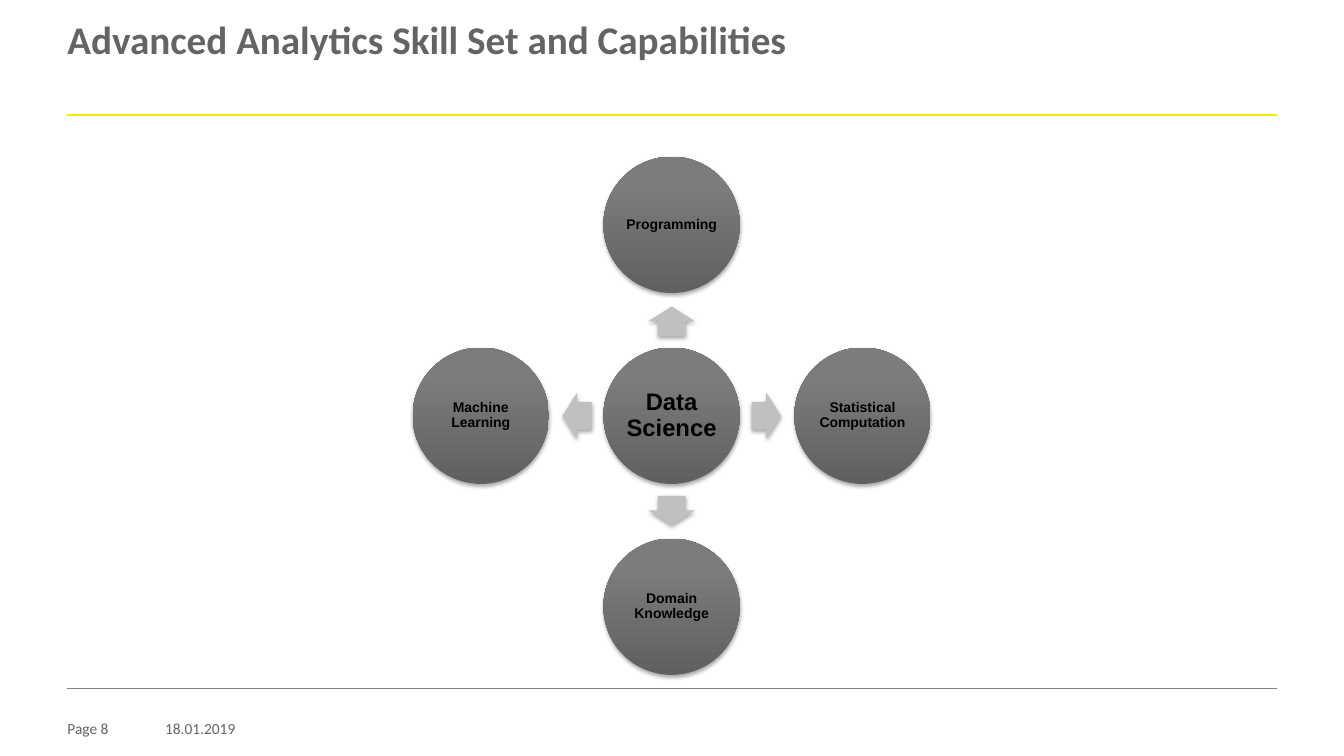
"""Build a slide with data science at the centre of four skills."""
import copy

import pptx
import pptx.dml.color
import pptx.enum.shapes
import pptx.enum.text
import pptx.oxml
import pptx.util

Pt = pptx.util.Pt
SHAPES = pptx.enum.shapes.MSO_SHAPE
ALIGN = pptx.enum.text.PP_ALIGN
ANCHOR = pptx.enum.text.MSO_ANCHOR
NS = "http://schemas.openxmlformats.org/drawingml/2006/main"

TITLE = "Advanced Analytics Skill Set and Capabilities"
PAGE = "Page 8"
DATE = "18.01.2019"
HUB = "Data Science"
SKILLS = [
    ("Programming", 0, -1, 270),
    ("Statistical Computation", 1, 0, 0),
    ("Domain Knowledge", 0, 1, 90),
    ("Machine Learning", -1, 0, 180),
]
RULES = [(82, "FFE600", 1.5), (491.7, "808080", 0.25)]
CIRCLE_STOPS = [(0, "606060"), (0.8, "7C7C7C"), (1, "7D7D7D")]
GREY, BLACK, ARROW_GREY = "646464", "000000", "C0C0C0"

WIDTH, HEIGHT = 960.48, 540
LEFT, RIGHT = 48.2, 912.3
CENTRE_X, CENTRE_Y = 480, 297
DIAMETER = 97.4
SKILL_REACH, ARROW_REACH = 136.4, 67.6
ARROW_LENGTH, ARROW_BREADTH = 20.9, 33.1


def color(value):
    return pptx.dml.color.RGBColor.from_string(value)


def write(shape, text, size=11, font="Calibri", fill=GREY, bold=False, align=ALIGN.LEFT,
          anchor=ANCHOR.TOP, spacing=None, inset=0, wrap=True):
    frame = shape.text_frame
    frame.word_wrap = wrap
    frame.vertical_anchor = anchor
    frame.margin_left = frame.margin_right = Pt(inset)
    frame.margin_top = frame.margin_bottom = Pt(inset)
    paragraph = frame.paragraphs[0]
    paragraph.alignment = align
    paragraph.line_spacing = spacing
    run = paragraph.add_run()
    run.text = text
    run.font.size = Pt(size)
    run.font.name = font
    run.font.bold = bold
    run.font.color.rgb = color(fill)


def add_label(slide, text, left, top, width, height, **text_format):
    box = slide.shapes.add_textbox(Pt(left), Pt(top), Pt(width), Pt(height))
    write(box, text, **text_format)


def add_rule(slide, y, line_color, weight):
    rule = slide.shapes.add_connector(
        pptx.enum.shapes.MSO_CONNECTOR.STRAIGHT, Pt(LEFT), Pt(y), Pt(RIGHT), Pt(y))
    rule.line.color.rgb = color(line_color)
    rule.line.width = Pt(weight)
    rule.element.spPr.append(pptx.oxml.parse_xml(f'<a:effectLst xmlns:a="{NS}"/>'))


def add_centred(slide, kind, x, y, width, height):
    shape = slide.shapes.add_shape(
        kind, Pt(x - width / 2), Pt(y - height / 2), Pt(width), Pt(height))
    shape.line.fill.background()
    shape.shadow.inherit = False
    effects = shape.element.spPr.find(f"{{{NS}}}effectLst")
    effects.append(pptx.oxml.parse_xml(
        f'<a:outerShdw xmlns:a="{NS}" blurRad="{Pt(3.1)}" dist="{Pt(1.8)}" dir="5400000" '
        'rotWithShape="0"><a:srgbClr val="000000"><a:alpha val="35000"/></a:srgbClr>'
        '</a:outerShdw>'))
    return shape


def add_circle(slide, text, x, y, size, inset):
    circle = add_centred(slide, SHAPES.OVAL, x, y, DIAMETER, DIAMETER)
    circle.fill.gradient()
    circle.fill.gradient_angle = 90
    stop_list = circle.element.spPr.find(f".//{{{NS}}}gsLst")
    stop_list.append(copy.deepcopy(stop_list[-1]))
    for stop, (position, shade) in zip(circle.fill.gradient_stops, CIRCLE_STOPS):
        stop.position = position
        stop.color.rgb = color(shade)
    write(circle, text, size=size, font="Arial", fill=BLACK, bold=True, align=ALIGN.CENTER,
          anchor=ANCHOR.MIDDLE, spacing=0.9, inset=inset)


def add_arrow(slide, x, y, rotation):
    arrow = add_centred(slide, SHAPES.RIGHT_ARROW, x, y, ARROW_LENGTH, ARROW_BREADTH)
    arrow.adjustments[0] = 0.6
    arrow.adjustments[1] = 0.5
    arrow.rotation = rotation
    arrow.fill.solid()
    arrow.fill.fore_color.rgb = color(ARROW_GREY)


def main():
    deck = pptx.Presentation()
    deck.slide_width, deck.slide_height = Pt(WIDTH), Pt(HEIGHT)
    slide = deck.slides.add_slide(deck.slide_layouts[6])

    add_label(slide, PAGE, LEFT, 513.4, 69.8, 15.8)
    add_label(slide, DATE, 118, 513.4, 108, 15.8, wrap=False)
    for rule in RULES:
        add_rule(slide, *rule)
    add_label(slide, TITLE, LEFT, 15.8, RIGHT - LEFT, 67.7, size=28, bold=True, spacing=0.85)

    add_circle(slide, HUB, CENTRE_X, CENTRE_Y, size=17, inset=1.5)
    for skill, dx, dy, rotation in SKILLS:
        add_arrow(slide, CENTRE_X + dx * ARROW_REACH, CENTRE_Y + dy * ARROW_REACH, rotation)
        add_circle(slide, skill, CENTRE_X + dx * SKILL_REACH, CENTRE_Y + dy * SKILL_REACH,
                   size=10, inset=0.9)

    deck.save("out.pptx")


if __name__ == "__main__":
    main()
